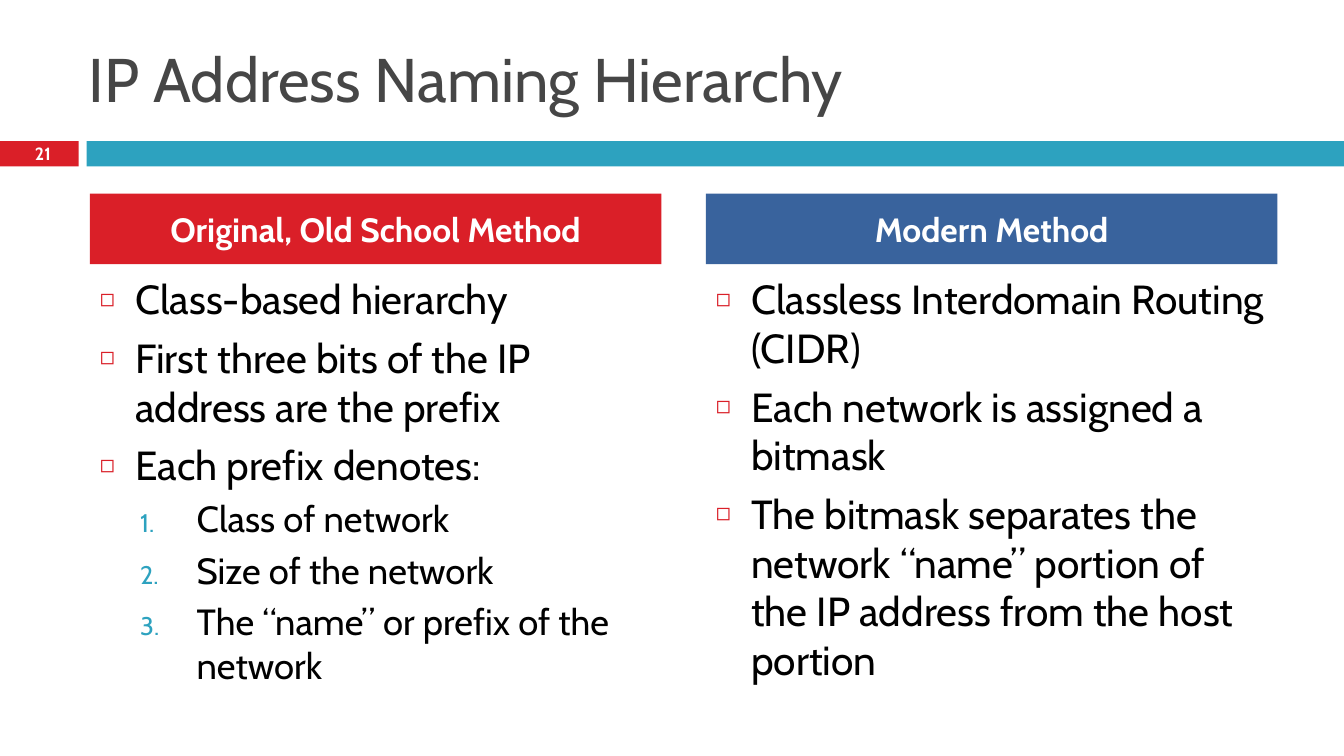
from dataclasses import dataclass

from lxml import etree
from pptx import Presentation
from pptx import util as u
from pptx.dml.color import RGBColor
from pptx.enum import shapes, text
from pptx.oxml.ns import qn

EMU_PER_PX = 9144  # 100 px to the inch


@dataclass(frozen=True)
class Theme:
    font: str = "Cabin"
    red: str = "DA1F28"
    teal: str = "2DA2BF"
    blue: str = "39639D"
    grey: str = "464646"
    black: str = "000000"
    white: str = "FFFFFF"
    title_pt: float = 44
    heading_pt: float = 24
    page_pt: float = 12.6


@dataclass(frozen=True)
class Box:
    left: int
    top: int
    width: int
    height: int

    def emu(self) -> list[u.Emu]:
        return [px(n) for n in (self.left, self.top, self.width, self.height)]


@dataclass(frozen=True)
class ListLevel:
    depth: int
    size: float
    space_before: float
    margin: int
    hanging: int
    marker: tuple[str, str, str]  # tag, attribute, value
    marker_color: str
    marker_percent: int


@dataclass(frozen=True)
class Method:
    heading: str
    fill: str
    left: int
    heading_idx: int
    list_idx: int
    items: list[tuple[ListLevel, str]]


THEME = Theme()
POINT = ListLevel(0, 29, 7, 35, 35, ("a:buChar", "char", "◻"), THEME.red, 60)
STEP = ListLevel(1, 26, 5.5, 96, 56, ("a:buAutoNum", "type", "arabicPeriod"), THEME.teal, 70)

METHODS = [
    Method("Original, Old School Method", THEME.red, 89, 1, 2, [
        (POINT, "Class-based hierarchy"),
        (POINT, "First three bits of the IP address are the prefix"),
        (POINT, "Each prefix denotes:"),
        (STEP, "Class of network"),
        (STEP, "Size of the network"),
        (STEP, "The “name” or prefix of the network"),
    ]),
    Method("Modern Method", THEME.blue, 700, 3, 4, [
        (POINT, "Classless Interdomain Routing (CIDR)"),
        (POINT, "Each network is assigned a bitmask"),
        (POINT, "The bitmask separates the network “name” portion of the IP address "
                "from the host portion"),
    ]),
]


def px(n: int) -> u.Emu:
    return u.Emu(n * EMU_PER_PX)


def place(shape, box: Box, anchor=text.MSO_ANCHOR.MIDDLE):
    """Move a text shape and return its frame, ready for text."""
    shape.left, shape.top, shape.width, shape.height = box.emu()
    frame = shape.text_frame
    frame.word_wrap = True
    frame.auto_size = text.MSO_AUTO_SIZE.NONE
    frame.vertical_anchor = anchor
    return frame


def write(paragraph, words: str, *, size: float, color: str, bold: bool = False,
          align=text.PP_ALIGN.LEFT, space_before: float = 0) -> None:
    paragraph.alignment = align
    paragraph.space_before = u.Pt(space_before)
    run = paragraph.add_run()
    run.text = words
    run.font.name = THEME.font
    run.font.size = u.Pt(size)
    run.font.bold = bold
    run.font.color.rgb = RGBColor.from_string(color)


def add_marker(paragraph, level: ListLevel) -> None:
    paragraph.level = level.depth
    props = paragraph._p.get_or_add_pPr()
    props.set("marL", str(px(level.margin)))
    props.set("indent", str(-px(level.hanging)))
    color = etree.SubElement(props, qn("a:buClr"))
    etree.SubElement(color, qn("a:srgbClr"), val=level.marker_color)
    etree.SubElement(props, qn("a:buSzPct"), val=str(level.marker_percent * 1000))
    etree.SubElement(props, qn("a:buFont"), typeface=THEME.font)
    tag, attribute, value = level.marker
    etree.SubElement(props, qn(tag), {attribute: value})


def add_bar(slide, box: Box, color: str) -> None:
    bar = slide.shapes.add_shape(shapes.MSO_SHAPE.RECTANGLE, *box.emu())
    bar.shadow.inherit = False
    bar.fill.solid()
    bar.fill.fore_color.rgb = RGBColor.from_string(color)
    bar.line.fill.background()


def fill_method(slide, method: Method) -> None:
    """Fill one column: coloured heading and the list below it."""
    parts = {part.placeholder_format.idx: part for part in slide.placeholders}
    heading = parts[method.heading_idx]
    frame = place(heading, Box(method.left, 192, 567, 70))
    heading.fill.solid()
    heading.fill.fore_color.rgb = RGBColor.from_string(method.fill)
    write(frame.paragraphs[0], method.heading, size=THEME.heading_pt,
          color=THEME.white, bold=True, align=text.PP_ALIGN.CENTER)

    frame = place(parts[method.list_idx], Box(method.left, 267, 567, 392),
                  text.MSO_ANCHOR.TOP)
    for i, (level, words) in enumerate(method.items):
        paragraph = frame.add_paragraph() if i else frame.paragraphs[0]
        add_marker(paragraph, level)
        write(paragraph, words, size=level.size, color=THEME.black,
              space_before=level.space_before if i else 0)


def main() -> None:
    deck = Presentation()
    deck.slide_width, deck.slide_height = px(1333), px(750)
    slide = deck.slides.add_slide(deck.slide_layouts.get_by_name("Comparison"))

    add_bar(slide, Box(0, 140, 78, 25), THEME.red)
    add_bar(slide, Box(86, 140, 1247, 25), THEME.teal)

    title = place(slide.shapes.title, Box(78, 30, 1189, 95))
    write(title.paragraphs[0], "IP Address Naming Hierarchy",
          size=THEME.title_pt, color=THEME.grey)

    for method in METHODS:
        fill_method(slide, method)

    page_box = Box(-1, 138, 87, 29)
    page = place(slide.shapes.add_textbox(*page_box.emu()), page_box)
    write(page.paragraphs[0], "21", size=THEME.page_pt, color=THEME.white,
          bold=True, align=text.PP_ALIGN.CENTER)

    deck.save("out.pptx")


if __name__ == "__main__":
    main()
